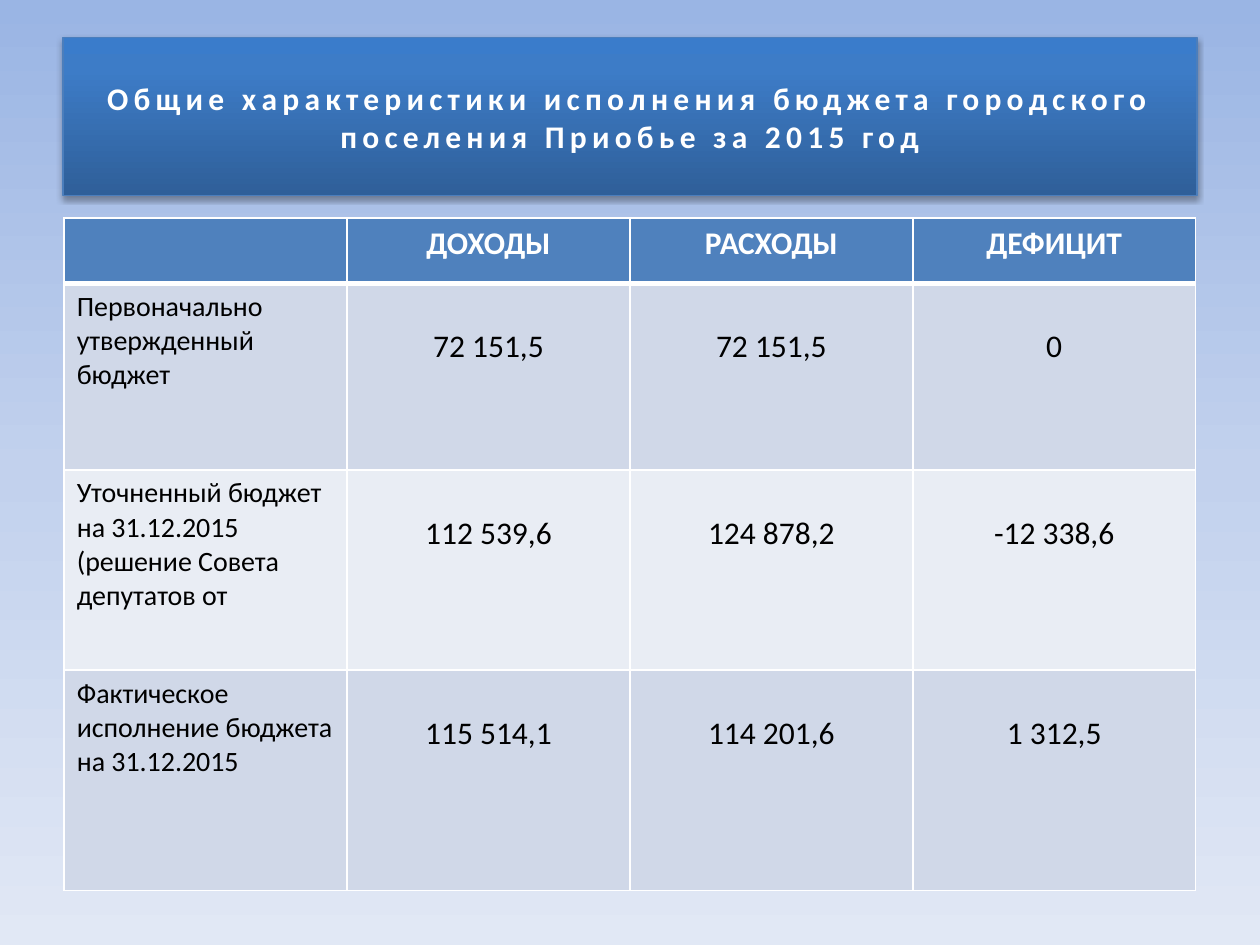
from typing import NamedTuple

from lxml.etree import SubElement as Sub
from pptx import Presentation
from pptx.dml.color import RGBColor as RGB
from pptx.enum.text import MSO_ANCHOR as Anchor, PP_ALIGN as Align
from pptx.oxml.ns import qn
from pptx.util import Inches, Pt

HUES = {
    "white": "FFFFFF", "black": "000000", "edge": "4B7EBC",
    "head": "4F81BD", "odd": "D0D8E8", "even": "E9EDF4",
}
SKY = [(0, "9AB5E4"), (50, "C2D1ED"), (100, "E1E8F5")]
BANNER = [(0, "2F5F99"), (80, "3D7CC7"), (100, "3A7CCB")]
FONT = "Calibri"
WIDE, HIGH = Inches(10), Inches(7.5)


class Row(NamedTuple):
    high: float
    cells: tuple[str, ...]


ROWS = [
    Row(0.52, ("", "ДОХОДЫ", "РАСХОДЫ", "ДЕФИЦИТ")),
    Row(1.48, ("Первоначально утвержденный бюджет", "72 151,5", "72 151,5", "0")),
    Row(1.59, ("Уточненный бюджет на 31.12.2015 (решение Совета депутатов от",
               "112 539,6", "124 878,2", "-12 338,6")),
    Row(1.75, ("Фактическое исполнение бюджета на 31.12.2015",
               "115 514,1", "114 201,6", "1 312,5")),
]


def shade(fill, root, stops: list, angle: int) -> None:
    """Give a fill any number of gradient stops; the angle runs clockwise."""
    fill.gradient()
    grad = next(root.iter(qn("a:gradFill")))
    for part in list(grad):
        grad.remove(part)
    items = Sub(grad, qn("a:gsLst"))
    for pos, hue in stops:
        stop = Sub(items, qn("a:gs"), pos=str(pos * 1000))
        Sub(stop, qn("a:srgbClr"), val=hue)
    Sub(grad, qn("a:lin"), ang=str(angle * 60000), scaled="0")


def cast(shape) -> None:
    """Drop a soft shadow below the shape."""
    shape.shadow.inherit = False
    effects = next(shape.element.iter(qn("a:effectLst")))
    drop = Sub(effects, qn("a:outerShdw"), blurRad=str(Pt(3.1)),
               dist=str(Pt(1.8)), dir="5400000", rotWithShape="0")
    hue = Sub(drop, qn("a:srgbClr"), val=HUES["black"])
    Sub(hue, qn("a:alpha"), val="35000")


def style(para, size: int, hue: str, bold: bool, align: Align) -> None:
    para.alignment = align
    for run in para.runs:
        font = run.font
        font.name, font.size, font.bold = FONT, Pt(size), bold
        font.color.rgb = RGB.from_string(HUES[hue])


def frame(cell, top: int, low: int) -> None:
    """Draw white borders, with their own widths above and below."""
    props = cell._tc.get_or_add_tcPr()
    for side, width in zip("LRTB", (1, 1, top, low)):
        line = Sub(props, qn(f"a:ln{side}"), w=str(Pt(width)))
        Sub(Sub(line, qn("a:solidFill")), qn("a:srgbClr"), val=HUES["white"])


def add_banner(slide, text: str) -> None:
    title = slide.shapes.title
    title.left, title.top = int(WIDE * 0.05), int(HIGH * 0.04)
    title.width, title.height = int(WIDE * 0.9), Inches(1.25)
    shade(title.fill, title.element, BANNER, 270)
    title.line.color.rgb = RGB.from_string(HUES["edge"])
    title.line.width = Pt(0.75)
    cast(title)
    title.text_frame.text = text
    title.text_frame.vertical_anchor = Anchor.MIDDLE
    para = title.text_frame.paragraphs[0]
    style(para, 18, "white", True, Align.CENTER)
    para.runs[0].font._element.set("spc", "300")


def add_budget(slide, rows: list[Row]) -> None:
    count = len(rows[0].cells)
    width = Inches(8.98)
    high = Inches(sum(row.high for row in rows))
    table = slide.shapes.add_table(
        len(rows), count, (WIDE - width) // 2, Inches(1.73), width, high).table
    for r, row in enumerate(rows):
        table.rows[r].height = Inches(row.high)
        head = r == 0
        band = "head" if head else "odd" if r % 2 else "even"
        for c, text in enumerate(row.cells):
            cell = table.cell(r, c)
            frame(cell, 3 if r == 1 else 1, 3 if head else 1)
            cell.fill.solid()
            cell.fill.fore_color.rgb = RGB.from_string(HUES[band])
            cell.text_frame.text = text
            label = c == 0
            if not head and not label:
                cell.margin_top = Inches(0.35)
            style(cell.text_frame.paragraphs[0], 16 if label else 18,
                  "white" if head else "black", head,
                  Align.LEFT if label else Align.CENTER)


def main() -> None:
    deck = Presentation()
    deck.slide_width, deck.slide_height = WIDE, HIGH
    slide = deck.slides.add_slide(deck.slide_layouts[5])
    shade(slide.background.fill, slide.element, SKY, 90)
    add_banner(slide, "Общие характеристики исполнения бюджета "
                      "городского поселения Приобье за 2015 год")
    add_budget(slide, ROWS)
    deck.save("out.pptx")


if __name__ == "__main__":
    main()
